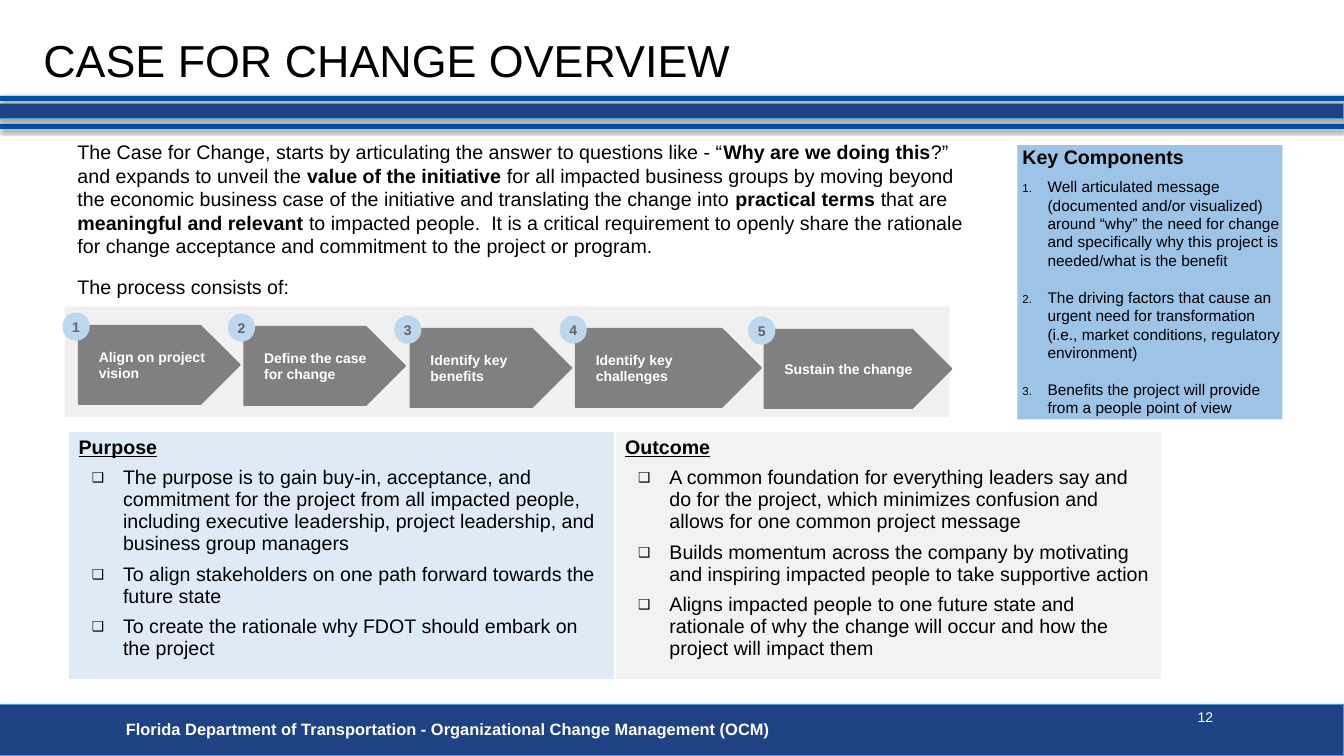
from dataclasses import dataclass

from lxml.etree import SubElement
from pptx import Presentation
from pptx.dml.color import RGBColor
from pptx.enum.shapes import MSO_SHAPE
from pptx.enum.text import MSO_ANCHOR, PP_ALIGN
from pptx.oxml.ns import qn
from pptx.util import Inches, Pt

BLACK = RGBColor(0x00, 0x00, 0x00)
WHITE = RGBColor(0xFF, 0xFF, 0xFF)
NAVY = RGBColor(0x1F, 0x42, 0x84)
BLUE = RGBColor(0x00, 0x54, 0xA8)
EDGE_BLUE = RGBColor(0x56, 0x98, 0xD3)
STEP_GRAY = RGBColor(0x80, 0x80, 0x80)
PROCESS_GRAY = RGBColor(0xF0, 0xF0, 0xF0)
BADGE_BLUE = RGBColor(0xBD, 0xD7, 0xEE)
BADGE_TEXT = RGBColor(0x64, 0x64, 0x64)
KEY_BLUE = RGBColor(0x9D, 0xC3, 0xE6)
PURPOSE_BLUE = RGBColor(0xDE, 0xEB, 0xF7)
OUTCOME_GRAY = RGBColor(0xF2, 0xF2, 0xF2)
FONT = "Arial"
SLIDE_WIDTH = 13.33


@dataclass
class Band:
    top: float
    height: float
    fill: RGBColor
    edge: RGBColor | None = None


@dataclass
class Step:
    left: float
    top: float
    width: float
    label: str


@dataclass
class Panel:
    heading: str
    fill: RGBColor
    points: list[str]


BANDS = [
    Band(1.23, 0.05, BLUE),
    Band(0.95, 0.05, BLUE),
    Band(1.03, 0.15, NAVY, EDGE_BLUE),
    Band(6.99, 0.51, NAVY, EDGE_BLUE),
]
STEPS = [
    Step(0.78, 3.23, 1.6, "Align on project vision"),
    Step(2.42, 3.24, 1.6, "Define the case for change"),
    Step(4.07, 3.26, 1.6, "Identify key benefits"),
    Step(5.71, 3.26, 1.84, "Identify key challenges"),
    Step(7.58, 3.27, 1.86, "Sustain the change"),
]
PANELS = [
    Panel("Purpose", PURPOSE_BLUE, [
        "The purpose is to gain buy-in, acceptance, and commitment for the project from all "
        "impacted people, including executive leadership, project leadership, and business "
        "group managers",
        "To align stakeholders on one path forward towards the future state",
        "To create the rationale why FDOT should embark on the project",
    ]),
    Panel("Outcome", OUTCOME_GRAY, [
        "A common foundation for everything leaders say and do for the project, which "
        "minimizes confusion and allows for one common project message",
        "Builds momentum across the company by motivating and inspiring impacted people to "
        "take supportive action",
        "Aligns impacted people to one future state and rationale of why the change will "
        "occur and how the project will impact them",
    ]),
]
KEY_COMPONENTS = [
    "Well articulated message (documented and/or visualized) around “why” the need for "
    "change and specifically why this project is needed/what is the benefit",
    "The driving factors that cause an urgent need for transformation (i.e., market "
    "conditions, regulatory environment)",
    "Benefits the project will provide from a people point of view",
]
# Every second part is bold.
INTRO = [
    "The Case for Change, starts by articulating the answer to questions like - “",
    "Why are we doing this",
    "?” and expands to unveil the ",
    "value of the initiative ",
    "for all impacted business groups by moving beyond the economic business case of the "
    "initiative and translating the change into ",
    "practical terms ",
    "that are ",
    "meaningful and relevant ",
    "to impacted people.  It is a critical requirement to openly share the rationale for "
    "change acceptance and commitment to the project or program.",
]


def style(paragraph, size: float, color: RGBColor = BLACK, bold: bool | None = None) -> None:
    font = paragraph.font
    font.name, font.size, font.bold = FONT, Pt(size), bold
    font.color.rgb = color


def add_bullet(paragraph, tag: str, indent: tuple[float, float], percent: int, **attributes: str) -> None:
    """Give a paragraph a hanging bullet or number; indent is (margin, hang)."""
    properties = paragraph._p.get_or_add_pPr()
    margin, hang = indent
    properties.set("marL", str(Inches(margin)))
    properties.set("indent", str(-Inches(hang)))
    SubElement(properties, qn("a:buSzPct"), val=str(percent * 1000))
    SubElement(properties, qn("a:buFont"), typeface=FONT)
    SubElement(properties, qn(tag), **attributes)


def add_block(slide, kind: MSO_SHAPE, box: tuple, fill: RGBColor, edge: RGBColor | None = None, edge_width: float = 1):
    block = slide.shapes.add_shape(kind, *map(Inches, box))
    block.shadow.inherit = False
    block.fill.solid()
    block.fill.fore_color.rgb = fill
    if edge is None:
        block.line.fill.background()
    else:
        block.line.color.rgb = edge
        block.line.width = Pt(edge_width)
    return block


def set_frame(frame, margins: tuple, anchor: MSO_ANCHOR) -> None:
    """Set wrapping, anchor and margins in the order left, top, right, bottom."""
    frame.word_wrap = True
    frame.vertical_anchor = anchor
    frame.margin_left, frame.margin_top, frame.margin_right, frame.margin_bottom = map(Inches, margins)


def add_text(slide, box: tuple, text: str, size: float, color: RGBColor = BLACK, bold: bool | None = None,
             margins: tuple = (0.1, 0.05, 0.1, 0.05), anchor: MSO_ANCHOR = MSO_ANCHOR.TOP):
    frame = slide.shapes.add_textbox(*map(Inches, box)).text_frame
    set_frame(frame, margins, anchor)
    frame.text = text
    style(frame.paragraphs[0], size, color, bold)
    return frame


def add_band(slide, band: Band) -> None:
    block = add_block(slide, MSO_SHAPE.RECTANGLE, (0, band.top, SLIDE_WIDTH, band.height),
                      band.fill, band.edge, 0.75)
    effects = block._element.spPr.find(qn("a:effectLst"))
    shadow = SubElement(effects, qn("a:outerShdw"), blurRad=str(Pt(3.1)), dist=str(Pt(1.8)),
                        dir="5400000", rotWithShape="0")
    shade = SubElement(shadow, qn("a:srgbClr"), val=str(BLACK))
    SubElement(shade, qn("a:alpha"), val="35000")


def add_step(slide, number: int, step: Step) -> None:
    arrow = add_block(slide, MSO_SHAPE.PENTAGON, (step.left, step.top, step.width, 0.78), STEP_GRAY, STEP_GRAY)
    badge = add_block(slide, MSO_SHAPE.OVAL, (step.left - 0.16, step.top - 0.13, 0.27, 0.28), BADGE_BLUE)
    for part, text, margins, color, align in (
        (arrow, step.label, (0.2, 0.05, 0, 0.05), WHITE, PP_ALIGN.LEFT),
        (badge, str(number), (0, 0, 0, 0), BADGE_TEXT, PP_ALIGN.CENTER),
    ):
        set_frame(part.text_frame, margins, MSO_ANCHOR.MIDDLE)
        part.text_frame.text = text
        part.text_frame.paragraphs[0].alignment = align
        style(part.text_frame.paragraphs[0], 10, color, True)


def fill_panel(cell, panel: Panel) -> None:
    cell.text = "\n".join([panel.heading, *panel.points])
    heading, *points = cell.text_frame.paragraphs
    for point in points:
        add_bullet(point, "a:buChar", (0.44, 0.31), 70, char="❑")
        point.space_before = Pt(3)
    for paragraph in (heading, *points):
        paragraph.space_after = Pt(3)
        style(paragraph, 14, bold=paragraph is heading)
    heading.font.underline = True
    for side, width in (("L", 1), ("R", 1), ("T", 1), ("B", 3)):
        border = SubElement(cell._tc.get_or_add_tcPr(), qn(f"a:ln{side}"), w=str(Pt(width)))
        SubElement(SubElement(border, qn("a:solidFill")), qn("a:srgbClr"), val=str(WHITE))
    cell.fill.solid()
    cell.fill.fore_color.rgb = panel.fill


def add_intro(slide) -> None:
    frame = add_text(slide, (0.67, 1.34, 9.07, 1.65), "", 14)
    for index, part in enumerate(INTRO):
        run = frame.paragraphs[0].add_run()
        run.text, run.font.bold = part, index % 2 == 1
    process = frame.add_paragraph()
    process.text = "The process consists of:"
    process.space_before = Pt(12)
    style(process, 14)


def add_key_components(slide) -> None:
    frame = add_block(slide, MSO_SHAPE.RECTANGLE, (10.09, 1.44, 2.63, 2.72), KEY_BLUE).text_frame
    set_frame(frame, (0.05, 0, 0, 0), MSO_ANCHOR.TOP)
    frame.text = "\n".join(["Key Components", *KEY_COMPONENTS])
    heading, *components = frame.paragraphs
    for component in components:
        add_bullet(component, "a:buAutoNum", (0.25, 0.25), 75, type="arabicPeriod")
        style(component, 11)
    for component in components[:-1]:
        component.space_after = Pt(13)
    heading.space_after = Pt(6)
    style(heading, 14, bold=True)
    for paragraph in frame.paragraphs:
        paragraph.alignment = PP_ALIGN.LEFT


def main() -> None:
    deck = Presentation()
    deck.slide_width, deck.slide_height = Inches(SLIDE_WIDTH), Inches(7.5)
    slide = deck.slides.add_slide(deck.slide_layouts[6])
    for band in BANDS:
        add_band(slide, band)
    add_text(slide, (1.15, 7.09, 9.44, 0.3),
             "Florida Department of Transportation - Organizational Change Management (OCM)", 11.7, WHITE, True)
    add_text(slide, (0.43, 0.38, 12.48, 0.43), "CASE FOR CHANGE OVERVIEW", 32,
             margins=(0, 0.05, 0, 0.05), anchor=MSO_ANCHOR.MIDDLE)
    add_text(slide, (11.78, 6.98, 1.13, 0.21), "12", 10, WHITE)
    add_intro(slide)
    panels = slide.shapes.add_table(1, len(PANELS), *map(Inches, (0.68, 4.28, 10.84, 2.47))).table
    panels.first_row = panels.horz_banding = False
    for cell, panel in zip(panels.iter_cells(), PANELS):
        fill_panel(cell, panel)
    add_block(slide, MSO_SHAPE.RECTANGLE, (0.64, 3.04, 8.78, 1.1), PROCESS_GRAY)
    for number, step in enumerate(STEPS, 1):
        add_step(slide, number, step)
    add_key_components(slide)
    deck.save("out.pptx")


if __name__ == "__main__":
    main()
